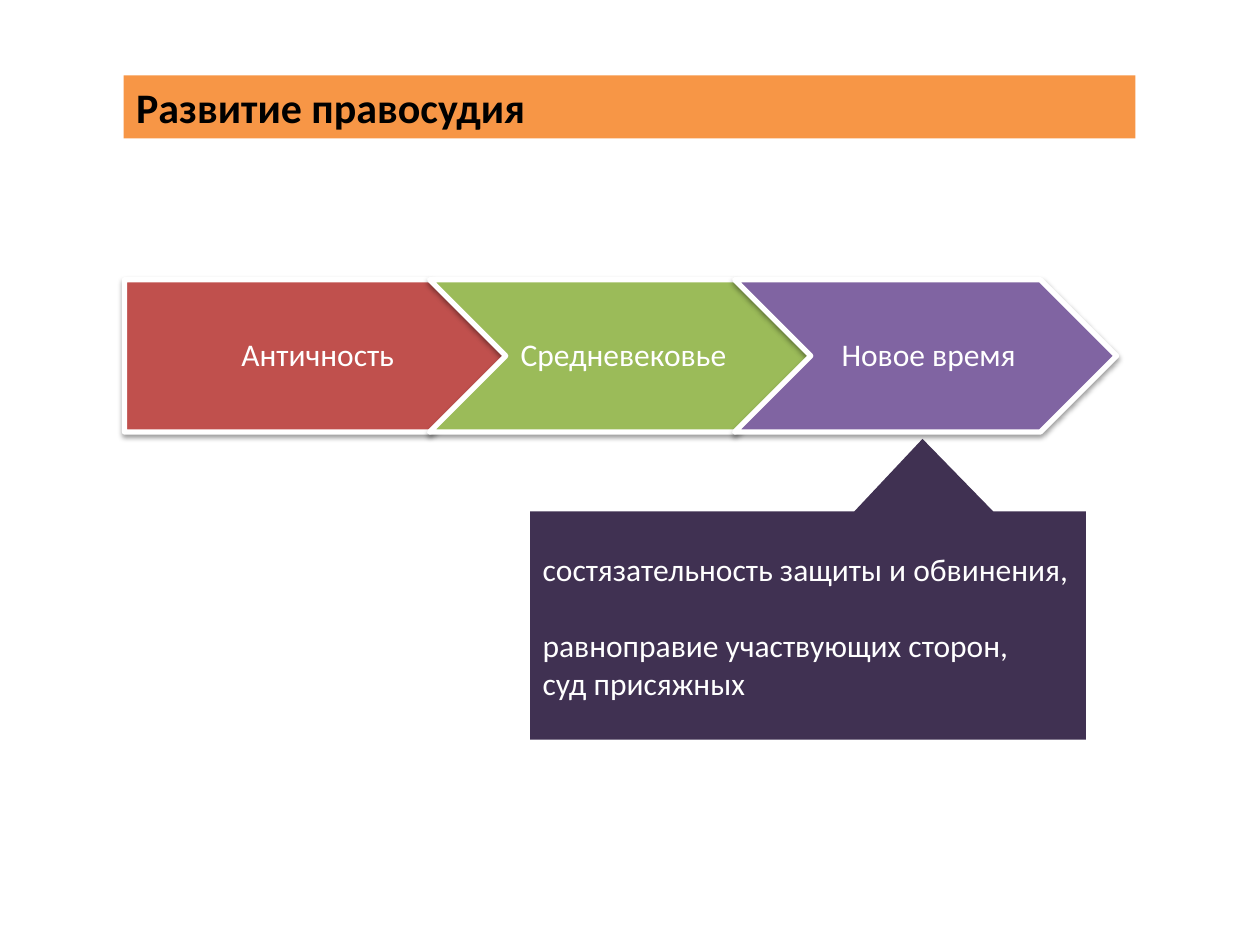
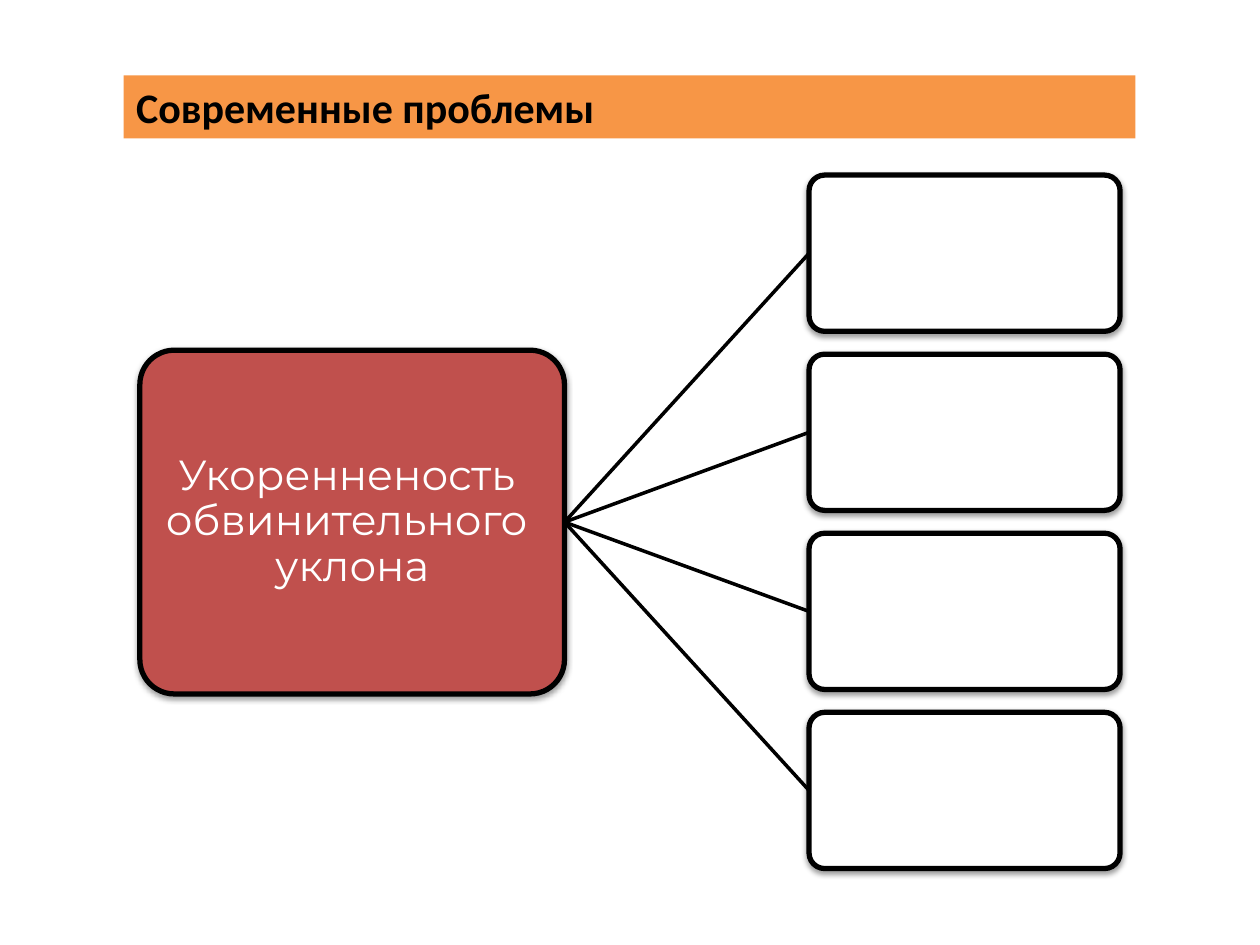
from lxml import etree
from pptx import Presentation, util as u
from pptx.dml.color import RGBColor
from pptx.enum import shapes, text
from pptx.oxml.ns import qn

# Content
ERAS_TITLE = "Развитие правосудия"
ERAS = [
    ("Античность", "C0504D"),
    ("Средневековье", "9BBB59"),
    ("Новое время", "8064A2"),
]
MODERN_FEATURES = [
    "состязательность защиты и обвинения,",
    "равноправие участвующих сторон,",
    "суд присяжных",
]
PROBLEMS_TITLE = "Современные проблемы"
MAIN_PROBLEM = "Укоренненость \vобвинительного \vуклона"
BLANK_BOXES = 4

# Shared look
ORANGE, RED, DARK_PURPLE = "F79646", "C0504D", "403152"
BLACK, WHITE = "000000", "FFFFFF"
MAIN_FONT, PROBLEM_FONT = "Calibri", "Montserrat"
TITLE_BAND = (2.49, 1.52, 20.4, 1.27)  # left, top, width, height in cm
KIND = shapes.MSO_SHAPE


def color(value):
    return RGBColor.from_string(value)


def add_shadow(shape):
    effects = shape._element.spPr.find(qn("a:effectLst"))
    shadow = etree.SubElement(effects, qn("a:outerShdw"), blurRad="40000",
                              dist="20000", dir="5400000", rotWithShape="0")
    shade = etree.SubElement(shadow, qn("a:srgbClr"), val=BLACK)
    etree.SubElement(shade, qn("a:alpha"), val="38000")


def add_block(slide, kind, box, fill, outline=None):
    """Plain filled shape; an outlined one also casts a shadow."""
    shape = slide.shapes.add_shape(kind, *map(u.Cm, box))
    shape.shadow.inherit = False
    shape.fill.solid()
    shape.fill.fore_color.rgb = color(fill)
    if outline:
        shape.line.color.rgb = color(outline)
        shape.line.width = u.Pt(3)
        add_shadow(shape)
    else:
        shape.line.fill.background()
    return shape


def write(shape, content, size, align, font=MAIN_FONT, ink=WHITE, bold=False,
          spacing=None, anchor=text.MSO_ANCHOR.MIDDLE):
    frame = shape.text_frame
    frame.text = content
    frame.word_wrap = True
    frame.auto_size = text.MSO_AUTO_SIZE.NONE
    frame.vertical_anchor = anchor
    for paragraph in frame.paragraphs:
        paragraph.alignment = align
        paragraph.line_spacing = spacing
        paragraph.font.name = font
        paragraph.font.size = u.Pt(size)
        paragraph.font.bold = bold
        paragraph.font.color.rgb = color(ink)
    return frame


def add_titled_slide(presentation, title):
    slide = presentation.slides.add_slide(presentation.slide_layouts[5])
    band = slide.shapes.title
    band.left, band.top, band.width, band.height = map(u.Cm, TITLE_BAND)
    band.fill.solid()
    band.fill.fore_color.rgb = color(ORANGE)
    write(band, title, 24, text.PP_ALIGN.LEFT, ink=BLACK, bold=True,
          anchor=text.MSO_ANCHOR.TOP)
    return slide


def build_eras(presentation):
    slide = add_titled_slide(presentation, ERAS_TITLE)

    # Row of overlapping arrows
    left, pitch = 2.51, 6.15
    for index, (era, fill) in enumerate(ERAS):
        kind = KIND.CHEVRON if index else KIND.PENTAGON
        box = (left + index * pitch, 5.64, 7.7, 3.07)
        arrow = add_block(slide, kind, box, fill, WHITE)
        frame = write(arrow, era, 18, text.PP_ALIGN.CENTER, spacing=0.9)
        # The wide left margin centres the text in the pointed first arrow
        frame.margin_left = u.Cm(0.12 if index else 0.94)
        frame.margin_right = u.Cm(0 if index else 0.08)

    # Callout under the last era
    callout = add_block(slide, KIND.RECTANGULAR_CALLOUT,
                        (10.69, 10.31, 11.2, 4.6), DARK_PURPLE)
    callout.adjustments[0] = 0.206
    callout.adjustments[1] = -0.818
    frame = write(callout, "\n".join(MODERN_FEATURES), 18, text.PP_ALIGN.LEFT)
    frame.paragraphs[0].space_after = u.Pt(22)


def build_problems(presentation):
    slide = add_titled_slide(presentation, PROBLEMS_TITLE)

    def add_box(box, fill):
        shape = add_block(slide, KIND.ROUNDED_RECTANGLE, box, fill, BLACK)
        shape.adjustments[0] = 0.1
        return shape

    # Main problem
    problem = add_box((2.82, 7.06, 8.56, 6.93), RED)
    frame = write(problem, MAIN_PROBLEM, 24, text.PP_ALIGN.CENTER,
                  font=PROBLEM_FONT, spacing=0.9)
    frame.margin_left = frame.margin_right = u.Cm(0.05)
    frame.margin_top = frame.margin_bottom = u.Cm(0.05)

    # Blank boxes, each joined to the main problem
    top, pitch = 3.53, 3.61
    for index in range(BLANK_BOXES):
        blank = add_box((16.31, top + index * pitch, 6.27, 3.15), WHITE)
        link = slide.shapes.add_connector(
            shapes.MSO_CONNECTOR.STRAIGHT, 0, 0, 0, 0)
        link.begin_connect(problem, 3)
        link.end_connect(blank, 1)
        link.line.color.rgb = color(BLACK)
        link.line.width = u.Pt(2)
        etree.SubElement(link._element.spPr, qn("a:effectLst"))


def main():
    presentation = Presentation()
    presentation.slide_width = u.Cm(25.4)
    presentation.slide_height = u.Cm(19.05)
    build_eras(presentation)
    build_problems(presentation)
    presentation.save("out.pptx")


if __name__ == "__main__":
    main()
